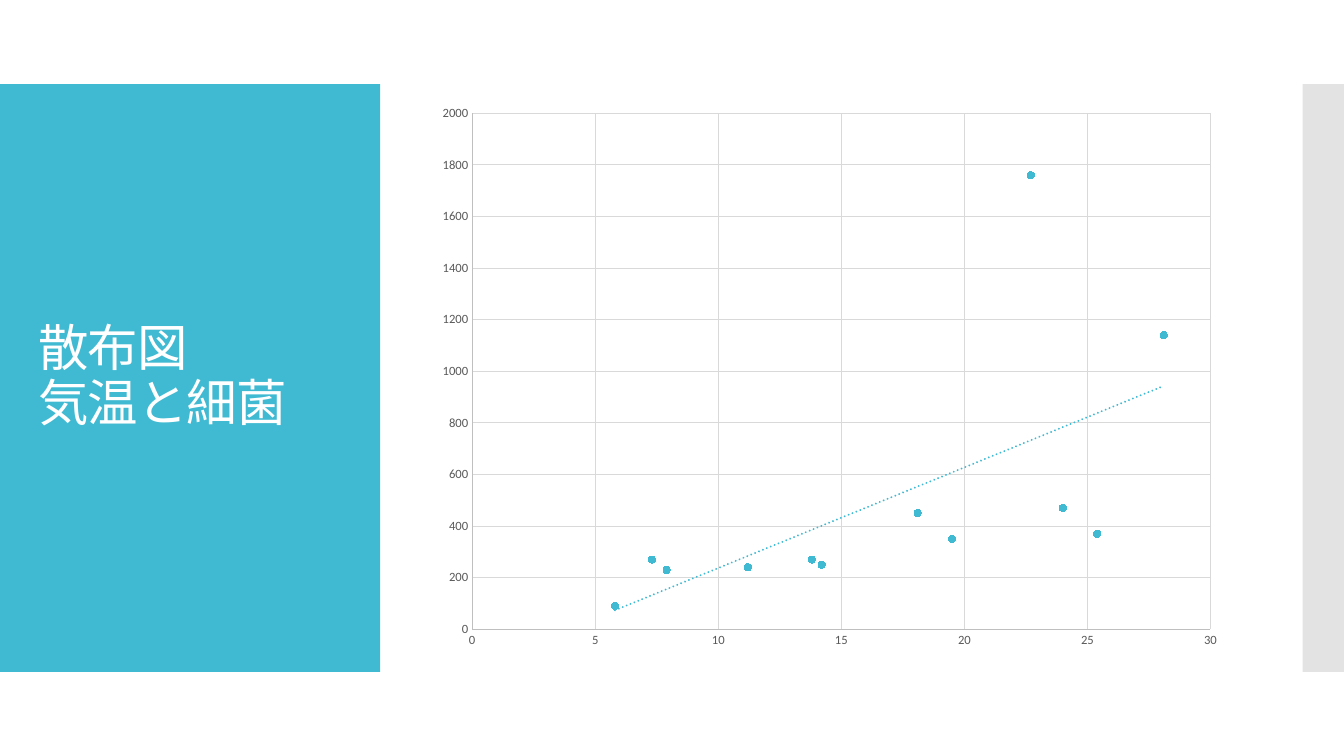
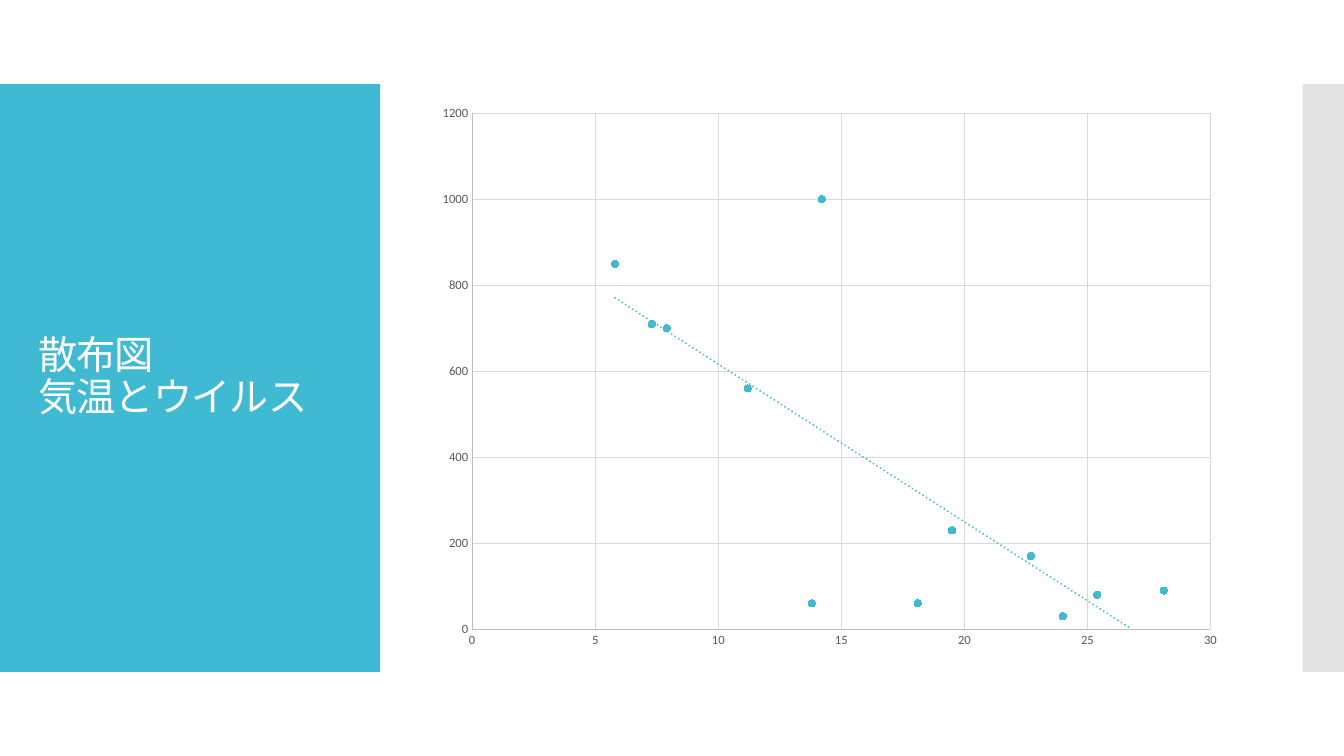
import pptx
import pptx.chart.data
import pptx.dml.color
import pptx.enum.chart
import pptx.enum.dml
import pptx.enum.shapes
import pptx.enum.text
import pptx.oxml
import pptx.oxml.ns
import pptx.util

Inches, Pt = pptx.util.Inches, pptx.util.Pt
RGBColor = pptx.dml.color.RGBColor

TEAL = RGBColor(0x40, 0xBA, 0xD2)
SILVER = RGBColor(0xC8, 0xC8, 0xC8)
WHITE = RGBColor(0xFF, 0xFF, 0xFF)
LABEL_GREY = RGBColor(0x59, 0x59, 0x59)
AXIS_GREY = RGBColor(0xBF, 0xBF, 0xBF)
GRID_GREY = RGBColor(0xD9, 0xD9, 0xD9)
FONT = "Calibri"

WIDTH, HEIGHT = 13.33, 7.5
BAND_TOP, BAND_HEIGHT = HEIGHT / 9, HEIGHT * 7 / 9
BANDS = [(0, 3.77, TEAL, 100), (12.92, WIDTH - 12.92, SILVER, 50)]
TITLE_BOX = (0.28, 1.23, 3.22, 5.03)
CHART_BOX = (4.23, 0.94, 8, 5.6)

TEMPERATURES = [5.8, 7.3, 11.2, 14.2, 19.5, 22.7, 25.4, 28.1, 24, 18.1, 13.8, 7.9]
PLOTS = [
    {"lines": ["散布図", "気温と細菌"], "size": 36, "top": 2000,
     "cases": [90, 270, 240, 250, 350, 1760, 370, 1140, 470, 450, 270, 230]},
    {"lines": ["散布図", "気温とウイルス"], "size": 28, "top": 1200,
     "cases": [850, 710, 560, 1000, 230, 170, 80, 90, 30, 60, 60, 700]},
]


def write_lines(frame, lines, size, color=WHITE, spacing=0.9, tracking=-60):
    frame.word_wrap = True
    frame.auto_size = pptx.enum.text.MSO_AUTO_SIZE.NONE
    frame.vertical_anchor = pptx.enum.text.MSO_ANCHOR.MIDDLE
    paragraph = frame.paragraphs[0]
    paragraph.alignment = pptx.enum.text.PP_ALIGN.LEFT
    paragraph.line_spacing = spacing
    for number, line in enumerate(lines):
        if number:
            paragraph.add_line_break()
        run = paragraph.add_run()
        run.text = line
        run.font.name = FONT
        run.font.size = Pt(size)
        run.font.color.rgb = color
        run.font._element.set("spc", str(tracking))


def put_bands_on_layout(layout, slide):
    for depth, (left, width, color, opacity) in enumerate(BANDS):
        band = slide.shapes.add_shape(
            pptx.enum.shapes.MSO_SHAPE.RECTANGLE,
            *map(Inches, (left, BAND_TOP, width, BAND_HEIGHT)))
        band.shadow.inherit = False
        band.fill.solid()
        band.fill.fore_color.rgb = color
        band.line.fill.background()
        if opacity < 100:
            tint = band.element.spPr.find(".//" + pptx.oxml.ns.qn("a:srgbClr"))
            tint.append(pptx.oxml.parse_xml(
                f'<a:alpha {pptx.oxml.ns.nsdecls("a")} val="{opacity * 1000}"/>'))
        layout.shapes.element.insert(2 + depth, band.element)


def style_axis(axis, top, step):
    axis.minimum_scale, axis.maximum_scale, axis.major_unit = 0, top, step
    axis.major_tick_mark = axis.minor_tick_mark = pptx.enum.chart.XL_TICK_MARK.NONE
    axis.has_major_gridlines = True
    axis.tick_labels.font.name = FONT
    axis.tick_labels.font.size = Pt(9)
    axis.tick_labels.font.color.rgb = LABEL_GREY
    for line, color in ((axis.format.line, AXIS_GREY),
                        (axis.major_gridlines.format.line, GRID_GREY)):
        line.color.rgb = color
        line.width = Pt(0.75)


def add_trend(series):
    trend = pptx.oxml.parse_xml(
        f'<c:trendline {pptx.oxml.ns.nsdecls("c", "a")}><c:spPr>'
        f'<a:ln w="{Pt(1.5)}" cap="rnd"><a:solidFill><a:srgbClr val="{TEAL}"/></a:solidFill>'
        '<a:prstDash val="sysDot"/></a:ln></c:spPr>'
        '<c:trendlineType val="linear"/><c:dispRSqr val="0"/><c:dispEq val="0"/>'
        '</c:trendline>')
    series._element.find(pptx.oxml.ns.qn("c:xVal")).addprevious(trend)


def add_scatter(slide, cases, top):
    data = pptx.chart.data.XyChartData()
    points = data.add_series("Series 1")
    for temperature, count in zip(TEMPERATURES, cases):
        points.add_data_point(temperature, count)
    chart = slide.shapes.add_chart(
        pptx.enum.chart.XL_CHART_TYPE.XY_SCATTER, *map(Inches, CHART_BOX), data).chart
    chart.has_title = chart.has_legend = False
    chart.font.name = FONT
    chart.font.size = Pt(10)
    chart.plots[0].vary_by_categories = False
    style_axis(chart.category_axis, 30, 5)
    style_axis(chart.value_axis, top, 200)
    series = chart.plots[0].series[0]
    series.smooth = False
    series.format.line.fill.background()
    series.marker.style = pptx.enum.chart.XL_MARKER_STYLE.CIRCLE
    series.marker.size = 5
    series.marker.format.fill.solid()
    series.marker.format.fill.fore_color.rgb = TEAL
    series.marker.format.line.color.rgb = TEAL
    add_trend(series)


def main():
    deck = pptx.Presentation()
    deck.slide_width, deck.slide_height = Inches(WIDTH), Inches(HEIGHT)
    layout = deck.slide_layouts.get_by_name("Title Only")
    for number, plot in enumerate(PLOTS):
        slide = deck.slides.add_slide(layout)
        if number == 0:
            put_bands_on_layout(layout, slide)
        title = slide.shapes.title
        title.left, title.top, title.width, title.height = map(Inches, TITLE_BOX)
        write_lines(title.text_frame, plot["lines"], plot["size"])
        add_scatter(slide, plot["cases"], plot["top"])
    deck.save("out.pptx")


if __name__ == "__main__":
    main()
